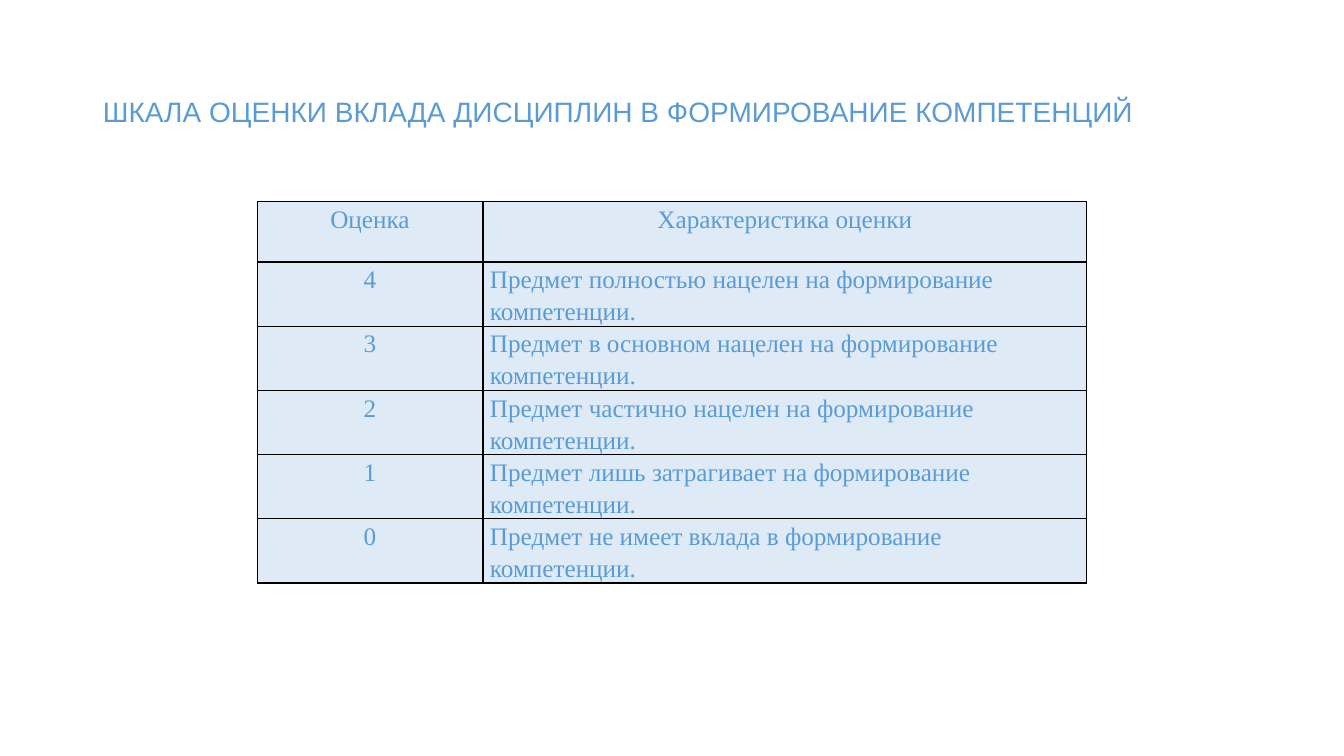
from dataclasses import dataclass

from lxml import etree
from pptx import Presentation
from pptx import util as u
from pptx.dml.color import RGBColor
from pptx.enum import text
from pptx.oxml import ns

PX = 9144  # EMU per px, 100 px to the inch
BLUE, PALE, BLACK = "5B9BD5", "DEEBF7", "000000"
COLUMN_WIDTHS = (224, 599)
ROW_HEIGHT = 60


@dataclass
class Grade:
    mark: str
    meaning: str


HEADER = Grade("Оценка", "Характеристика оценки")
GRADES = [
    Grade(mark, f"Предмет {verb} формирование компетенции.")
    for mark, verb in (
        ("4", "полностью нацелен на"),
        ("3", "в основном нацелен на"),
        ("2", "частично нацелен на"),
        ("1", "лишь затрагивает на"),
        ("0", "не имеет вклада в"),
    )
]


def px(n: int) -> u.Emu:
    return u.Emu(n * PX)


def color(value: str) -> RGBColor:
    return RGBColor.from_string(value)


def style(p, font: str, size: int, align, spacing: float) -> None:
    p.alignment = align
    p.line_spacing = spacing
    p.font.name = font
    p.font.size = u.Pt(size)
    p.font.color.rgb = color(BLUE)


def add_borders(cell) -> None:
    """Black 1 pt lines, placed ahead of the cell's fill."""
    tc_pr = cell._tc.get_or_add_tcPr()
    for i, side in enumerate(("lnL", "lnR", "lnT", "lnB")):
        ln = etree.Element(ns.qn(f"a:{side}"), w=str(u.Pt(1)))
        fill = etree.SubElement(ln, ns.qn("a:solidFill"))
        etree.SubElement(fill, ns.qn("a:srgbClr"), val=BLACK)
        tc_pr.insert(i, ln)


def fill_cell(cell, words: str, align) -> None:
    cell.text = words
    cell.margin_left = cell.margin_right = px(7)
    cell.margin_top = cell.margin_bottom = 0
    cell.fill.solid()
    cell.fill.fore_color.rgb = color(PALE)
    add_borders(cell)
    style(cell.text_frame.paragraphs[0], "Times New Roman", 18, align, 1.15)


def add_title(slide) -> None:
    title = slide.shapes.title
    title.left, title.top, title.width, title.height = map(px, (92, 40, 1150, 145))
    tf = title.text_frame
    tf.text = "ШКАЛА ОЦЕНКИ ВКЛАДА ДИСЦИПЛИН В ФОРМИРОВАНИЕ КОМПЕТЕНЦИЙ"
    tf.auto_size = text.MSO_AUTO_SIZE.NONE
    tf.vertical_anchor = text.MSO_ANCHOR.MIDDLE
    style(tf.paragraphs[0], "Arial", 20, text.PP_ALIGN.LEFT, 0.9)


def add_grade_table(slide) -> None:
    rows = [HEADER, *GRADES]
    table = slide.shapes.add_table(
        len(rows), len(COLUMN_WIDTHS), px(255), px(200),
        px(sum(COLUMN_WIDTHS)), px(ROW_HEIGHT * len(rows)),
    ).table
    for column, width in zip(table.columns, COLUMN_WIDTHS):
        column.width = px(width)
    table.horz_banding = False
    table.first_row = False
    for i, grade in enumerate(rows):
        meaning_align = text.PP_ALIGN.LEFT if i else text.PP_ALIGN.CENTER
        fill_cell(table.cell(i, 0), grade.mark, text.PP_ALIGN.CENTER)
        fill_cell(table.cell(i, 1), grade.meaning, meaning_align)


def main() -> None:
    prs = Presentation()
    prs.slide_width, prs.slide_height = px(1333), px(750)
    slide = prs.slides.add_slide(prs.slide_layouts[5])  # title only
    add_title(slide)
    add_grade_table(slide)
    prs.save("out.pptx")


if __name__ == "__main__":
    main()
